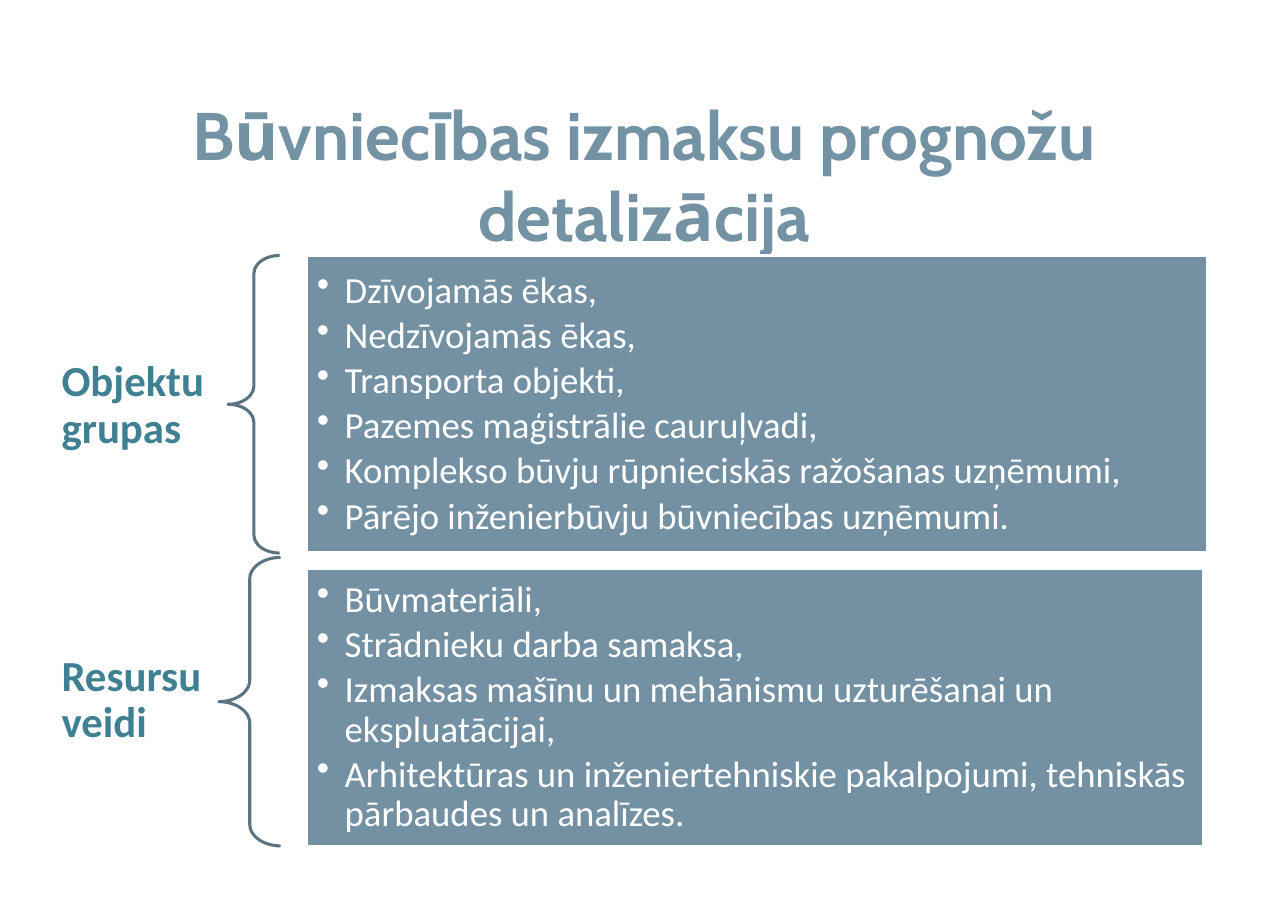
from lxml.etree import SubElement
from pptx import Presentation
from pptx.dml.color import RGBColor
from pptx.enum.shapes import MSO_SHAPE
from pptx.enum.text import MSO_ANCHOR, PP_ALIGN
from pptx.oxml.ns import qn
from pptx.util import Cm, Pt

TITLE_BLUE = RGBColor(0x73, 0x92, 0xA3)
PANEL_BLUE = RGBColor(0x73, 0x91, 0xA2)
BRACE_BLUE = RGBColor(0x5C, 0x74, 0x82)
LABEL_TEAL = RGBColor(0x3F, 0x80, 0x92)
WHITE = RGBColor(0xFF, 0xFF, 0xFF)

GROUPS = [
    {
        "label": ("Objektu grupas", (0.86, 8.08, 5.94, 2.57)),
        "brace": (5.26, 5.89, 1.19, 6.86),
        "panel": (7.06, 5.89, 20.78, 6.86),
        "items": [
            "Dzīvojamās ēkas,",
            "Nedzīvojamās ēkas,",
            "Transporta objekti,",
            "Pazemes maģistrālie cauruļvadi,",
            "Komplekso būvju rūpnieciskās ražošanas uzņēmumi,",
            "Pārējo inženierbūvju būvniecības uzņēmumi.",
        ],
    },
    {
        "label": ("Resursu veidi", (0.86, 14.73, 4.45, 2.84)),
        "brace": (5.05, 12.85, 1.42, 6.65),
        "panel": (7.06, 13.11, 20.7, 6.4),
        "items": [
            "Būvmateriāli,",
            "Strādnieku darba samaksa,",
            "Izmaksas mašīnu un mehānismu uzturēšanai un ekspluatācijai,",
            "Arhitektūras un inženiertehniskie pakalpojumi, tehniskās pārbaudes un analīzes.",
        ],
    },
]


class SlideBuilder:
    """Draws the title, labels, braces and bulleted panels of one slide."""

    body_font = "Calibri"
    title_font = "Cabin"
    line_width = Pt(2)

    def __init__(self, page):
        self.page = page

    def prepare_frame(self, box, side, top):
        frame = box.text_frame
        frame.word_wrap = True
        frame.vertical_anchor = MSO_ANCHOR.MIDDLE
        frame.margin_left = frame.margin_right = Cm(side)
        frame.margin_top = frame.margin_bottom = Cm(top)
        return frame

    def style_runs(self, para, name, size, color, bold=False):
        for span in para.runs:
            span.font.name = name
            span.font.size = Pt(size)
            span.font.bold = bold
            span.font.color.rgb = color

    def text(self, words, place):
        box = self.page.shapes.add_textbox(*map(Cm, place))
        frame = self.prepare_frame(box, 0.56, 0.2)
        frame.text = words
        return frame.paragraphs[0]

    def title(self, words, place):
        para = self.text(words, place)
        para.alignment = PP_ALIGN.CENTER
        self.style_runs(para, self.title_font, 44, TITLE_BLUE, True)

    def label(self, words, place):
        para = self.text(words, place)
        para.line_spacing = 0.9
        para.space_after = Pt(9.8)
        self.style_runs(para, self.body_font, 28, LABEL_TEAL, True)

    def shape(self, kind, place, line_color):
        shape = self.page.shapes.add_shape(kind, *map(Cm, place))
        shape.shadow.inherit = False
        shape.line.color.rgb = line_color
        shape.line.width = self.line_width
        return shape

    def brace(self, place):
        brace = self.shape(MSO_SHAPE.LEFT_BRACE, place, BRACE_BLUE)
        brace.fill.background()
        brace.adjustments[0] = 0.35
        brace.adjustments[1] = 0.5

    def panel(self, items, place):
        panel = self.shape(MSO_SHAPE.RECTANGLE, place, WHITE)
        panel.fill.solid()
        panel.fill.fore_color.rgb = PANEL_BLUE
        frame = self.prepare_frame(panel, 0.25, 0.25)
        frame.text = "\n".join(items)
        for para in frame.paragraphs:
            self.bullet(para)
            self.style_runs(para, self.body_font, 24, WHITE)

    def bullet(self, para):
        para.alignment = PP_ALIGN.LEFT
        para.line_spacing = 0.9
        para.space_after = Pt(3.6)
        properties = para._p.get_or_add_pPr()
        properties.set("marL", str(Cm(0.64)))
        properties.set("indent", str(-Cm(0.64)))
        SubElement(properties, qn("a:buChar"), char="•")


def main():
    deck = Presentation()
    deck.slide_width, deck.slide_height = Cm(29.7), Cm(21)
    builder = SlideBuilder(deck.slides.add_slide(deck.slide_layouts[6]))
    builder.title("Būvniecības izmaksu prognožu detalizācija", (0.46, 2.31, 28.8, 3.4))
    for group in GROUPS:
        builder.label(*group["label"])
        builder.brace(group["brace"])
        builder.panel(group["items"], group["panel"])
    deck.save("out.pptx")


if __name__ == "__main__":
    main()
